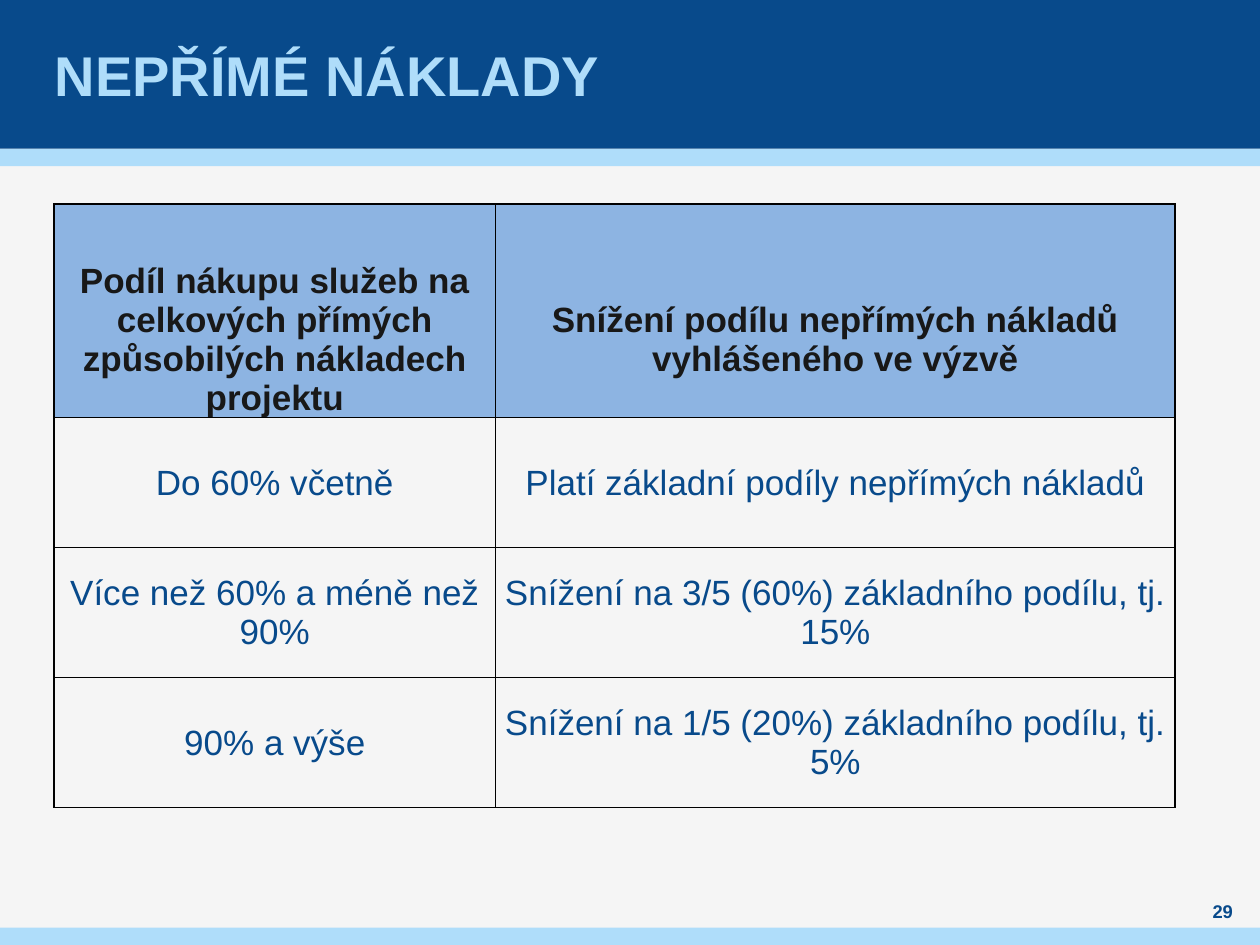
from lxml import etree
from pptx import Presentation
from pptx.dml.color import RGBColor
from pptx.enum.shapes import MSO_SHAPE as Shape
from pptx.enum.text import MSO_ANCHOR as Anchor, PP_ALIGN as Align
from pptx.oxml.ns import qn
from pptx.util import Cm, Pt

# Content
TITLE = "NEPŘÍMÉ NÁKLADY"
PAGE_NUMBER = "29"
ROWS = [
    ("Podíl nákupu služeb na celkových přímých způsobilých nákladech projektu",
     "Snížení podílu nepřímých nákladů vyhlášeného ve výzvě"),
    ("Do 60% včetně", "Platí základní podíly nepřímých nákladů"),
    ("Více než 60% a méně než 90%",
     "Snížení na 3/5 (60%) základního podílu, tj. 15%"),
    ("90% a výše", "Snížení na 1/5 (20%) základního podílu, tj. 5%"),
]

COLORS = {
    "background": "F5F5F5", "navy": "084A8B", "sky": "AFDDFA",
    "header": "8DB4E2", "header text": "181818", "border": "000000",
}

# Layout, in centimetres
WIDTH, HEIGHT = 25.4, 19.05
TITLE_HEIGHT, STRIPE = 3, 0.35
BANDS = [  # top, height, colour
    (TITLE_HEIGHT, STRIPE, "sky"),
    (0, TITLE_HEIGHT, "navy"),
    (HEIGHT - STRIPE, STRIPE, "sky"),
]
TABLE_LEFT, TABLE_TOP = 1.09, 4.11
COLUMN_WIDTHS = (8.9, 13.7)
HEADER_HEIGHT, ROW_HEIGHT = 4.31, 2.62
HEADER_LIFTS = (0, 0.79)  # space kept below each header text


def color(name):
    return RGBColor.from_string(COLORS[name])


def style(paragraph, size, name, bold, align):
    paragraph.alignment = align
    font = paragraph.font
    font.name, font.size, font.bold = "Arial", Pt(size), bold
    font.color.rgb = color(name)


def set_borders(cell, widths):
    properties = cell._tc.get_or_add_tcPr()
    for index, (side, width) in enumerate(widths.items()):
        line = etree.Element(qn("a:ln" + side), w=str(Pt(width)))
        fill = etree.SubElement(line, qn("a:solidFill"))
        etree.SubElement(fill, qn("a:srgbClr"), val=COLORS["border"])
        properties.insert(index, line)


presentation = Presentation()
presentation.slide_width, presentation.slide_height = Cm(WIDTH), Cm(HEIGHT)
slide = presentation.slides.add_slide(presentation.slide_layouts[5])
slide.background.fill.solid()
slide.background.fill.fore_color.rgb = color("background")

# Bands, kept behind the title
for top, height, name in BANDS:
    band = slide.shapes.add_shape(
        Shape.RECTANGLE, 0, Cm(top), Cm(WIDTH), Cm(height))
    band.shadow.inherit = False
    band.fill.solid()
    band.fill.fore_color.rgb = color(name)
    band.line.fill.background()
    slide.shapes.title._element.addprevious(band._element)

# Title
title = slide.shapes.title
title.left, title.top, title.width, title.height = (
    Cm(1), 0, Cm(23.4), Cm(TITLE_HEIGHT))
frame = title.text_frame
frame.text = TITLE
frame.vertical_anchor = Anchor.MIDDLE
frame.margin_left = frame.margin_right = Cm(0.1)
frame.margin_top = frame.margin_bottom = 0
style(frame.paragraphs[0], 32, "sky", True, Align.LEFT)

# Table
row_heights = [HEADER_HEIGHT] + [ROW_HEIGHT] * (len(ROWS) - 1)
table = slide.shapes.add_table(
    len(ROWS), len(COLUMN_WIDTHS), Cm(TABLE_LEFT), Cm(TABLE_TOP),
    Cm(sum(COLUMN_WIDTHS)), Cm(sum(row_heights))).table
for column, width in zip(table.columns, COLUMN_WIDTHS):
    column.width = Cm(width)
for r, (texts, height) in enumerate(zip(ROWS, row_heights)):
    table.rows[r].height = Cm(height)
    is_header, is_last = r == 0, r == len(ROWS) - 1
    for c, text in enumerate(texts):
        cell = table.cell(r, c)
        cell.text = text
        cell.margin_left = cell.margin_right = cell.margin_top = Cm(0.02)
        cell.margin_bottom = Cm(HEADER_LIFTS[c] if is_header else 0)
        cell.vertical_anchor = Anchor.BOTTOM if is_header else Anchor.MIDDLE
        style(cell.text_frame.paragraphs[0], 20,
              "header text" if is_header else "navy", is_header, Align.CENTER)
        if is_header:
            cell.fill.solid()
            cell.fill.fore_color.rgb = color("header")
        else:
            cell.fill.background()
        set_borders(cell, {
            "L": 1 if c == 0 else 0.5,
            "R": 0.5 if c == 0 else 1,
            "T": 1 if r <= 1 else 0.5,
            "B": 1 if is_header or is_last else 0.5,
        })

# Page number
number = slide.shapes.add_textbox(Cm(24), Cm(18.11), Cm(1.3), Cm(0.51))
frame = number.text_frame
frame.word_wrap = True
frame.vertical_anchor = Anchor.MIDDLE
frame.margin_left = frame.margin_right = 0
frame.margin_top = frame.margin_bottom = 0
frame.text = PAGE_NUMBER
style(frame.paragraphs[0], 10.5, "navy", True, Align.CENTER)

presentation.save("out.pptx")
